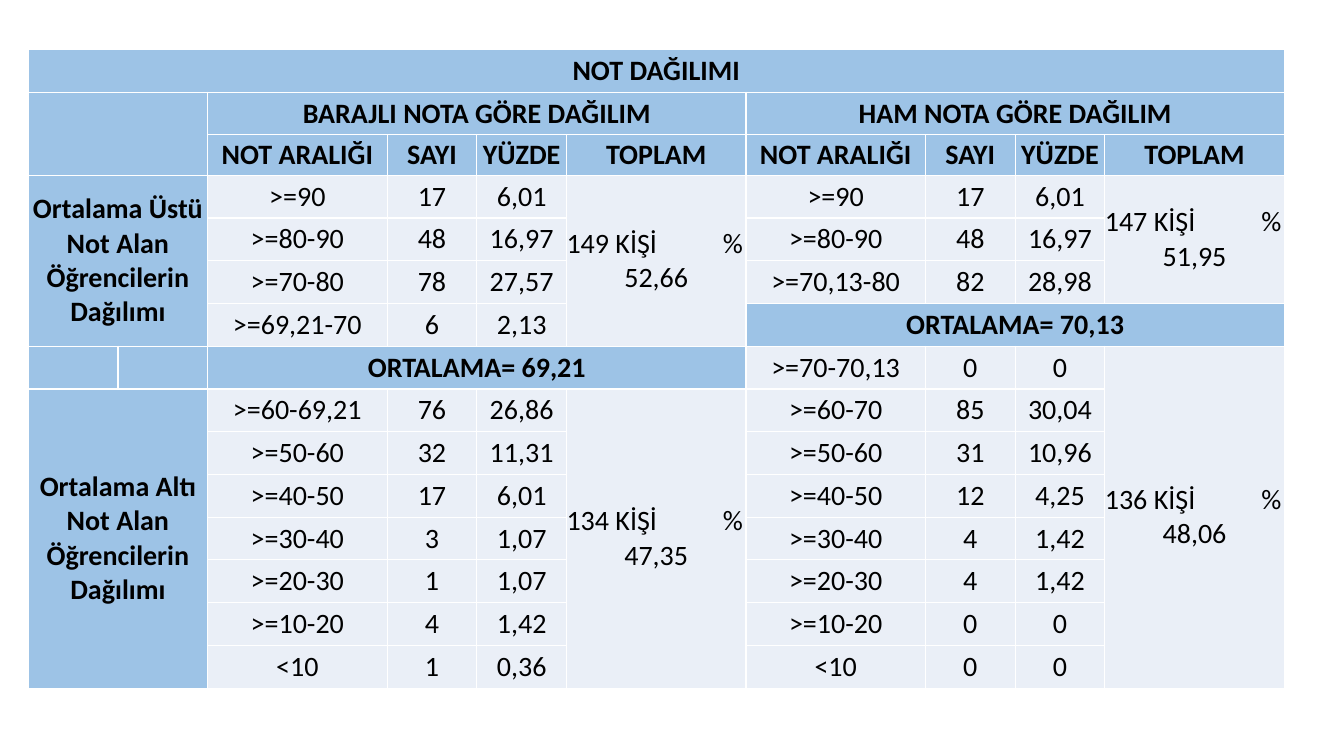
from lxml import etree
from pptx import Presentation
from pptx import util as u
from pptx.dml.color import RGBColor
from pptx.enum import text
from pptx.oxml.ns import qn

COLORS = {"header": "9DC3E6", "body": "EAEFF7", "border": "FFFFFF", "text": "000000"}
NARROW, WIDE = 0.89, 1.78
HEADER_ROWS = 3

# Each group: first column, title, average, row of the average, grade rows
groups = [
    (2, "BARAJLI NOTA GÖRE DAĞILIM", "ORTALAMA= 69,21", 7, [
        (">=90", "17", "6,01"),
        (">=80-90", "48", "16,97"),
        (">=70-80", "78", "27,57"),
        (">=69,21-70", "6", "2,13"),
        (">=60-69,21", "76", "26,86"),
        (">=50-60", "32", "11,31"),
        (">=40-50", "17", "6,01"),
        (">=30-40", "3", "1,07"),
        (">=20-30", "1", "1,07"),
        (">=10-20", "4", "1,42"),
        ("<10", "1", "0,36"),
    ], [("149 KİŞİ", "52,66"), ("134 KİŞİ", "47,35")]),
    (6, "HAM NOTA GÖRE DAĞILIM", "ORTALAMA= 70,13", 6, [
        (">=90", "17", "6,01"),
        (">=80-90", "48", "16,97"),
        (">=70,13-80", "82", "28,98"),
        (">=70-70,13", "0", "0"),
        (">=60-70", "85", "30,04"),
        (">=50-60", "31", "10,96"),
        (">=40-50", "12", "4,25"),
        (">=30-40", "4", "1,42"),
        (">=20-30", "4", "1,42"),
        (">=10-20", "0", "0"),
        ("<10", "0", "0"),
    ], [("147 KİŞİ", "51,95"), ("136 KİŞİ", "48,06")]),
]

deck = Presentation()
deck.slide_width, deck.slide_height = u.Inches(13.33), u.Inches(7.5)
page = deck.slides.add_slide(deck.slide_layouts[6])

frame = page.shapes.add_table(15, 10, u.Inches(0.28), u.Inches(0.49),
                              u.Inches(12.47), u.Inches(6.34))
table = frame.table
table.first_row = table.horz_banding = False
for column, width in zip(table.columns, [NARROW] * 2 + [WIDE, NARROW, NARROW, WIDE] * 2):
    column.width = u.Inches(width)
for row in table.rows:
    row.height = u.Inches((6.34 - 0.4) / 14)
table.rows[2].height = u.Inches(0.4)

# Margins, white borders and the light fill for every cell
for cell in table.iter_cells():
    cell.margin_left = cell.margin_right = cell.margin_top = cell.margin_bottom = 0
    cell.vertical_anchor = text.MSO_ANCHOR.MIDDLE
    for side in ("lnL", "lnR", "lnT", "lnB"):
        line = etree.SubElement(cell._tc.tcPr, qn("a:" + side), w=str(u.Pt(1)))
        fill = etree.SubElement(line, qn("a:solidFill"))
        etree.SubElement(fill, qn("a:srgbClr"), val=COLORS["border"])
    cell.fill.solid()
    cell.fill.fore_color.rgb = RGBColor.from_string(COLORS["body"])


def add_span(para, words, bold):
    span = para.add_run()
    span.text = words
    span.font.name, span.font.size, span.font.bold = "Calibri", u.Pt(20), bold
    span.font.color.rgb = RGBColor.from_string(COLORS["text"])


def put(row, col, words="", rows=1, cols=1, header=False):
    """Merge a block of cells, write centred words in it and return its first cell."""
    cell = table.cell(row, col)
    if rows * cols > 1:
        cell.merge(table.cell(row + rows - 1, col + cols - 1))
    if header:
        cell.fill.fore_color.rgb = RGBColor.from_string(COLORS["header"])
    para = cell.text_frame.paragraphs[0]
    para.alignment = text.PP_ALIGN.CENTER
    if words:
        add_span(para, words, header)
    return cell


put(0, 0, "NOT DAĞILIMI", cols=10, header=True)
put(1, 0, rows=2, cols=2, header=True)
put(3, 0, "Ortalama Üstü Not Alan Öğrencilerin Dağılımı", rows=4, cols=2, header=True)
put(7, 0, header=True)
put(7, 1, header=True)
put(8, 0, "Ortalama Altı Not Alan Öğrencilerin Dağılımı", rows=7, cols=2, header=True)

for left, title, average, average_row, grades, totals in groups:
    put(1, left, title, cols=4, header=True)
    for offset, label in enumerate(["NOT ARALIĞI", "SAYI", "YÜZDE", "TOPLAM"]):
        put(2, left + offset, label, header=True)
    put(average_row, left, average, cols=4, header=True)

    grade_rows = [row for row in range(HEADER_ROWS, 15) if row != average_row]
    for row, grade in zip(grade_rows, grades):
        for offset, value in enumerate(grade):
            put(row, left + offset, value)

    blocks = [(HEADER_ROWS, average_row), (average_row + 1, 15)]
    for (start, end), (people, percent) in zip(blocks, totals):
        cell = put(start, left + 3, rows=end - start)
        # The percent sign sits on a right tab at the cell's edge
        para = cell.text_frame.paragraphs[0]
        para.alignment = text.PP_ALIGN.LEFT
        add_span(para, people + "\t%", False)
        tabs = etree.SubElement(para._p.get_or_add_pPr(), qn("a:tabLst"))
        etree.SubElement(tabs, qn("a:tab"), pos=str(u.Inches(1.75)), algn="r")
        para = cell.text_frame.add_paragraph()
        para.alignment = text.PP_ALIGN.CENTER
        add_span(para, percent, False)

deck.save("out.pptx")
